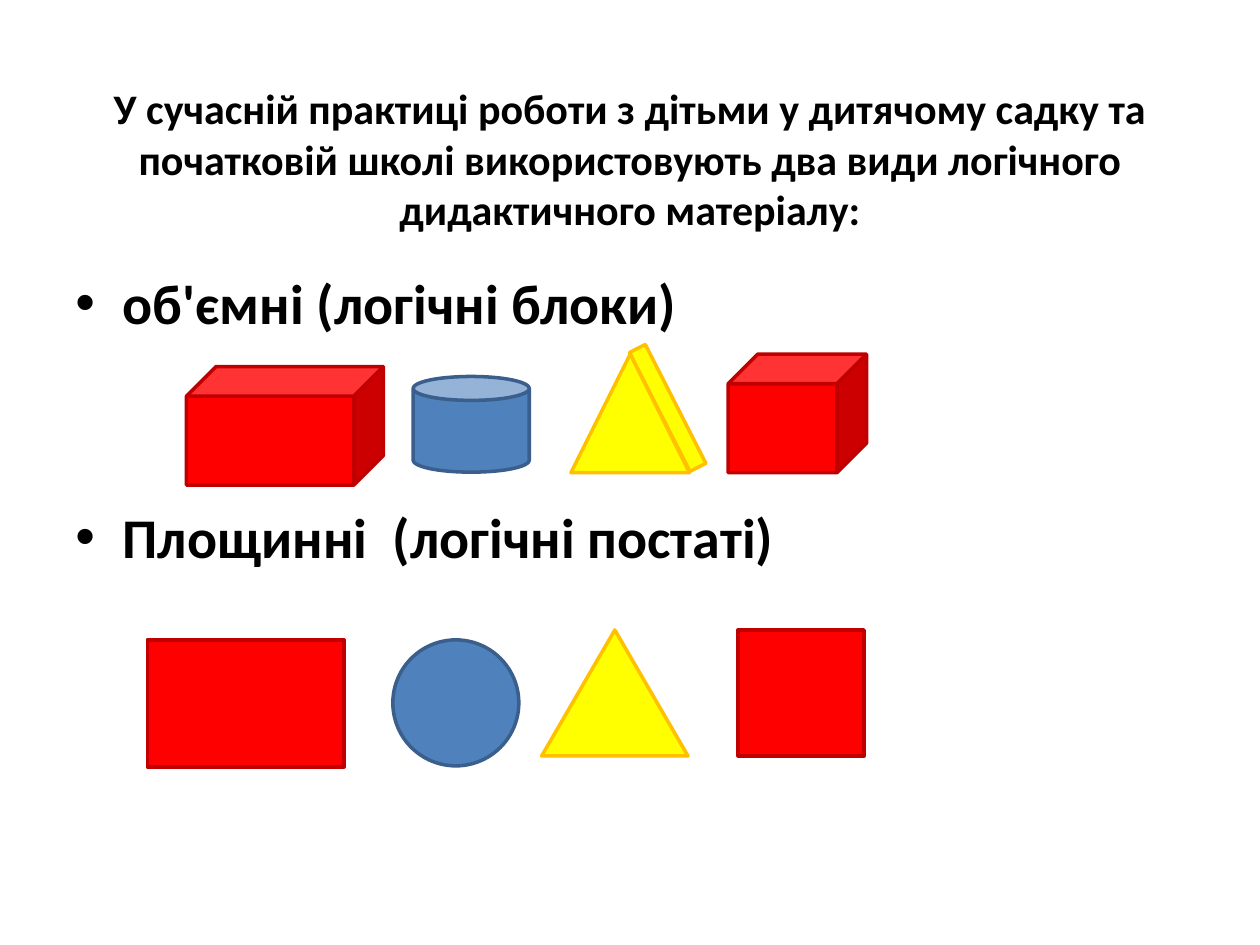
from dataclasses import dataclass

from lxml import etree
from pptx import Presentation
from pptx.dml.color import RGBColor
from pptx.enum.shapes import MSO_SHAPE
from pptx.enum.text import MSO_ANCHOR, MSO_AUTO_SIZE, PP_ALIGN
from pptx.oxml.ns import qn
from pptx.util import Cm, Pt

CUBE, CAN, RECT = MSO_SHAPE.CUBE, MSO_SHAPE.CAN, MSO_SHAPE.RECTANGLE
OVAL, CONE = MSO_SHAPE.OVAL, MSO_SHAPE.ISOSCELES_TRIANGLE
TOP, MIDDLE = MSO_ANCHOR.TOP, MSO_ANCHOR.MIDDLE
CENTER, LEFT = PP_ALIGN.CENTER, PP_ALIGN.LEFT
FIXED = MSO_AUTO_SIZE.NONE


@dataclass(frozen=True)
class Theme:
    font: str = "Calibri"
    ink: str = "000000"
    red: tuple = ("FF0000", "C00000")
    blue: tuple = ("4F81BD", "3A5F8C")
    gold: tuple = ("FFFF00", "FFC000")
    head: int = 24
    body: int = 32
    edge: int = 2
    gap: float = 95.7


def apply(target, values):
    for name, value in values.items():
        setattr(target, name, value)


class Page:
    """Hold the theme and the current slide, and add each kind of element."""

    def __init__(self, deck, theme):
        self.theme = theme
        self.slide = deck.slides.add_slide(deck.slide_layouts[5])

    def place(self, shape, box):
        names = ("left", "top", "width", "height")
        apply(shape, dict(zip(names, map(Cm, box))))

    def style(self, para, size, align):
        para.alignment = align
        apply(para.font, {"name": self.theme.font, "size": Pt(size), "bold": True})
        para.font.color.rgb = RGBColor.from_string(self.theme.ink)

    def title(self, text, box):
        shape = self.slide.shapes.title
        self.place(shape, box)
        frame = shape.text_frame
        apply(frame, {"text": text, "word_wrap": True, "auto_size": FIXED,
                      "vertical_anchor": MIDDLE})
        self.style(frame.paragraphs[0], self.theme.head, CENTER)

    def bullets(self, items, box):
        frame = self.slide.shapes.add_textbox(*map(Cm, box)).text_frame
        apply(frame, {"word_wrap": True, "auto_size": FIXED, "vertical_anchor": TOP})
        for rank, item in enumerate(items):
            para = frame.add_paragraph() if rank else frame.paragraphs[0]
            para.text = item
            props = para._p.get_or_add_pPr()
            props.set("marL", str(Cm(0.95)))
            props.set("indent", str(Cm(-0.95)))
            etree.SubElement(props, qn("a:buFont")).set("typeface", "Arial")
            etree.SubElement(props, qn("a:buChar")).set("char", "•")
            para.space_before = Pt(self.theme.gap if rank else 0)
            self.style(para, self.theme.body, LEFT)

    def solid(self, kind, box, paint, turn=0):
        shape = self.slide.shapes.add_shape(kind, *map(Cm, box))
        fill, edge = map(RGBColor.from_string, paint)
        shape.shadow.inherit = False
        shape.rotation = turn
        shape.fill.solid()
        shape.fill.fore_color.rgb = fill
        shape.line.color.rgb = edge
        shape.line.width = Pt(self.theme.edge)


def main():
    deck = Presentation()
    apply(deck, {"slide_width": Cm(25.4), "slide_height": Cm(19.05)})
    theme = Theme()
    page = Page(deck, theme)
    page.title("У сучасній практиці роботи з дітьми у дитячому садку та "
               "початковій школі використовують два види логічного "
               "дидактичного матеріалу:", (1.27, 1.6, 22.86, 3.18))
    page.bullets(("об'ємні (логічні блоки)", "Площинні  (логічні постаті)"),
                 (1.27, 5.28, 22.86, 12.57))

    blocks = (
        (CUBE, (3.76, 7.39, 3.97, 2.39), theme.red),
        (CAN, (8.33, 7.59, 2.34, 1.93), theme.blue),
        (RECT, (13.28, 6.88, 0.36, 2.69), theme.gold, 333),
        (CONE, (11.51, 7.14, 2.39, 2.39), theme.gold),
        (CUBE, (14.68, 7.14, 2.79, 2.39), theme.red),
    )
    flats = (
        (RECT, (2.97, 12.9, 3.97, 2.56), theme.red),
        (OVAL, (7.92, 12.9, 2.54, 2.54), theme.blue),
        (CONE, (10.92, 12.7, 2.95, 2.54), theme.gold),
        (RECT, (14.88, 12.7, 2.54, 2.54), theme.red),
    )
    for item in blocks + flats:
        page.solid(*item)
    deck.save("out.pptx")


if __name__ == "__main__":
    main()
